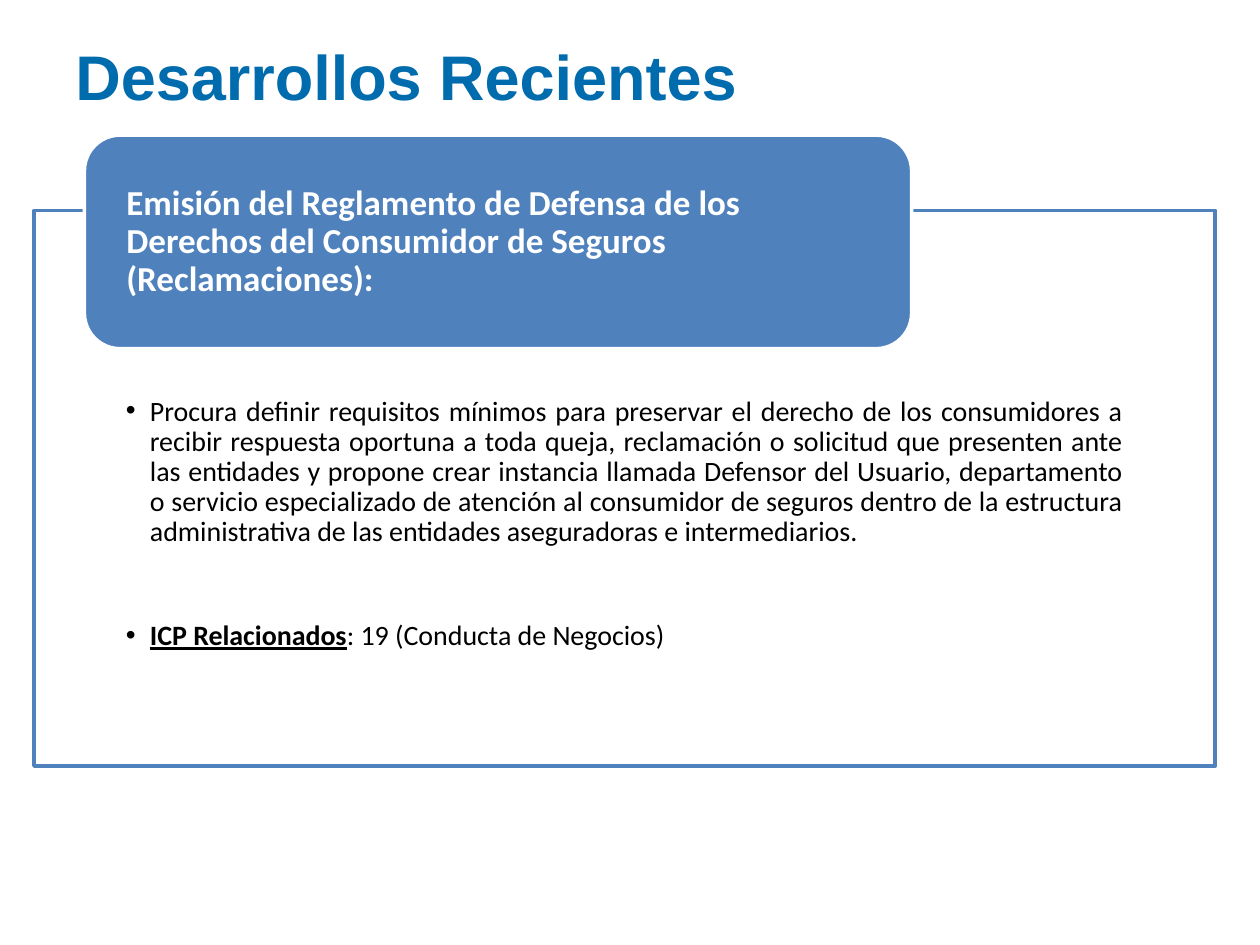
from lxml.etree import SubElement
from pptx import Presentation
from pptx.dml.color import RGBColor
from pptx.enum.shapes import MSO_SHAPE as Shape
from pptx.enum.text import MSO_ANCHOR as Anchor, PP_ALIGN as Align
from pptx.oxml.ns import qn
from pptx.util import Inches, Pt

WIDTH, HEIGHT = Inches(10), Inches(7.5)
BLUE, WHITE, BLACK, TITLE_BLUE = "4F81BD", "FFFFFF", "000000", "006BAD"

TITLE = "Desarrollos Recientes"
HEADING = ("Emisión del Reglamento de Defensa de los Derechos del Consumidor "
           "de Seguros (Reclamaciones):")
PURPOSE = ("Procura definir requisitos mínimos para preservar el derecho de los "
           "consumidores a recibir respuesta oportuna a toda queja, reclamación o "
           "solicitud que presenten ante las entidades y propone crear instancia "
           "llamada Defensor del Usuario, departamento o servicio especializado de "
           "atención al consumidor de seguros dentro de la estructura administrativa "
           "de las entidades aseguradoras e intermediarios.")


def color(hex_string):
    return RGBColor.from_string(hex_string)


def share(left, top, width, height):
    """Turn percentages of the slide's size into lengths."""
    return (round(left * WIDTH / 100), round(top * HEIGHT / 100),
            round(width * WIDTH / 100), round(height * HEIGHT / 100))


def set_frame(shape, anchor, side_margin=0):
    """Set wrapping, anchor and side margins in inches; return the text frame."""
    frame = shape.text_frame
    frame.word_wrap = True
    frame.vertical_anchor = anchor
    frame.margin_left = frame.margin_right = Inches(side_margin)
    frame.margin_top = frame.margin_bottom = 0
    return frame


def add_panel(slide, preset, box, fill, line):
    shape = slide.shapes.add_shape(preset, *box)
    shape.shadow.inherit = False
    shape.fill.solid()
    shape.fill.fore_color.rgb = color(fill)
    shape.line.color.rgb = color(line)
    shape.line.width = Pt(2)
    return shape


def set_opacity(shape, percent):
    fill = shape.fill._xPr.find(qn("a:solidFill"))
    SubElement(fill[0], qn("a:alpha"), val=str(percent * 1000))


def add_run(paragraph, text, size, hex_string, name="Calibri", bold=False,
            underline=False):
    run = paragraph.add_run()
    run.text = text
    font = run.font
    font.name, font.size = name, Pt(size)
    font.bold, font.underline = bold, underline
    font.color.rgb = color(hex_string)


def format_bullet(paragraph):
    properties = paragraph._p.get_or_add_pPr()
    indent = Inches(0.19)
    properties.set("marL", str(indent))
    properties.set("indent", str(-indent))
    SubElement(properties, qn("a:buFont"), typeface="Arial")
    SubElement(properties, qn("a:buChar"), char="•")
    paragraph.alignment = Align.JUSTIFY
    paragraph.line_spacing = 0.9


def add_title(slide):
    title = slide.shapes.add_textbox(*share(5, 1.73, 90, 12.53))
    frame = set_frame(title, Anchor.MIDDLE, 0.1)
    add_run(frame.paragraphs[0], TITLE, 36, TITLE_BLUE, "Arial", bold=True)


def add_border(slide):
    border = add_panel(slide, Shape.RECTANGLE,
                       share(2.7, 22.27, 93.75, 58.8), WHITE, BLUE)
    set_opacity(border, 90)


def add_body(slide):
    body = slide.shapes.add_textbox(*share(10, 42, 79.15, 37.5))
    frame = set_frame(body, Anchor.TOP)
    purpose, related = frame.paragraphs[0], frame.add_paragraph()
    for paragraph in (purpose, related):
        format_bullet(paragraph)
    related.space_before = Pt(42)
    add_run(purpose, PURPOSE, 16, BLACK)
    add_run(related, "ICP Relacionados", 16, BLACK, bold=True, underline=True)
    add_run(related, ": 19 (Conducta de Negocios)", 16, BLACK)


def add_heading(slide):
    heading = add_panel(slide, Shape.ROUNDED_RECTANGLE,
                        share(6.7, 14.3, 65.65, 22.6), BLUE, WHITE)
    frame = set_frame(heading, Anchor.MIDDLE, 0.25)
    paragraph = frame.paragraphs[0]
    paragraph.alignment = Align.LEFT
    paragraph.line_spacing = 0.9
    add_run(paragraph, HEADING, 20, WHITE, bold=True)


def main():
    presentation = Presentation()
    presentation.slide_width, presentation.slide_height = WIDTH, HEIGHT
    slide = presentation.slides.add_slide(presentation.slide_layouts[6])
    add_title(slide)
    add_border(slide)
    add_body(slide)
    add_heading(slide)
    presentation.save("out.pptx")


if __name__ == "__main__":
    main()
